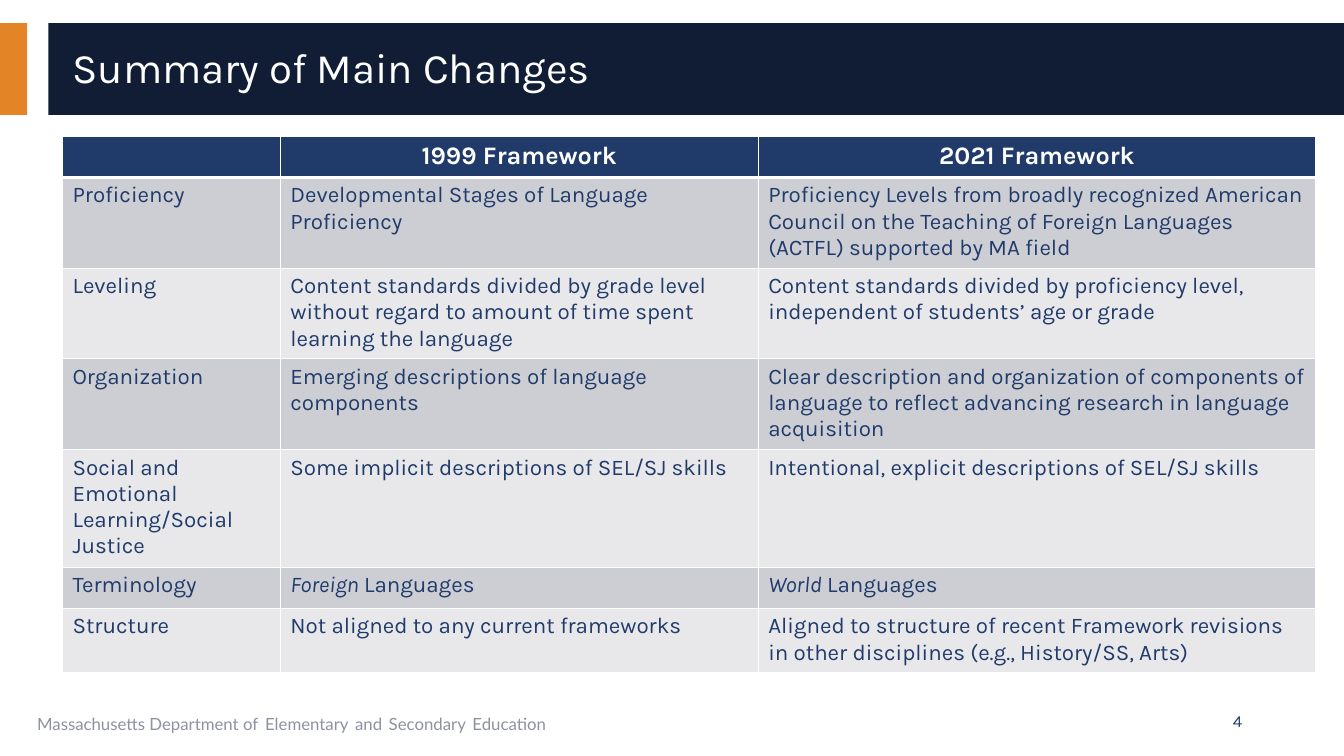
import pptx
import pptx.util
import pptx.dml.color
import pptx.enum.shapes
import pptx.enum.text
import pptx.oxml
import pptx.oxml.ns

Inches = pptx.util.Inches
ALIGN = pptx.enum.text.PP_ALIGN
ANCHOR = pptx.enum.text.MSO_ANCHOR
NAVY, WHITE, GREY = "203B6A", "FFFFFF", "8D92A1"


def color(value):
    return pptx.dml.color.RGBColor.from_string(value)


def add_run(paragraph, text, size, hue, **format_values):
    run = paragraph.add_run()
    run.text = text
    run.font.size = pptx.util.Pt(size)
    run.font.color.rgb = color(hue)
    for name, value in ({"name": "Karla"} | format_values).items():
        setattr(run.font, name, value)


deck = pptx.Presentation()
deck.slide_width = Inches(13.33)
deck.slide_height = Inches(7.5)
slide = deck.slides.add_slide(deck.slide_layouts[6])

for left, width, hue in [(0, 0.27, "E38526"), (0.48, 12.85, "101D35")]:
    band = slide.shapes.add_shape(
        pptx.enum.shapes.MSO_SHAPE.RECTANGLE,
        Inches(left), Inches(0.23), Inches(width), Inches(0.91))
    band.shadow.inherit = False
    band.fill.solid()
    band.fill.fore_color.rgb = color(hue)
    band.line.fill.background()

footer_words = ["Massachusetts Department of", "Elementary", "and", "Secondary", "Education"]
footer_runs = [(footer_words[0], 12, GREY, "Lato")]
for word in footer_words[1:]:
    footer_runs += [(" ", 18, NAVY, "Lato"), (word, 12, GREY, "Lato")]

texts = [
    ((0.27, 6.95, 8.44, 0.4), footer_runs, ANCHOR.TOP, {}),
    ((0.62, 0.32, 12.44, 0.74), [("Summary of Main Changes", 30, WHITE, "Karla")],
     ANCHOR.MIDDLE, {"line_spacing": 0.9}),
    ((9.42, 6.95, 3, 0.4), [("4", 12, NAVY, "Karla")],
     ANCHOR.MIDDLE, {"alignment": ALIGN.RIGHT}),
]
for place, runs, anchor, format_values in texts:
    frame = slide.shapes.add_textbox(*map(Inches, place)).text_frame
    frame.word_wrap = True
    frame.vertical_anchor = anchor
    paragraph = frame.paragraphs[0]
    for name, value in format_values.items():
        setattr(paragraph, name, value)
    for text, size, hue, font_name in runs:
        add_run(paragraph, text, size, hue, name=font_name)

changes = [
    ("", "1999 Framework", "2021 Framework"),
    ("Proficiency", "Developmental Stages of Language Proficiency",
     "Proficiency Levels from broadly recognized American Council on the Teaching of "
     "Foreign Languages (ACTFL) supported by MA field"),
    ("Leveling",
     "Content standards divided by grade level without regard to amount of time spent "
     "learning the language",
     "Content standards divided by proficiency level, independent of students’ age or grade"),
    ("Organization", "Emerging descriptions of language components",
     "Clear description and organization of components of language to reflect advancing "
     "research in language acquisition"),
    ("Social and Emotional Learning/Social Justice",
     "Some implicit descriptions of SEL/SJ skills",
     "Intentional, explicit descriptions of SEL/SJ skills"),
    ("Terminology", "Foreign Languages", "World Languages"),
    ("Structure", "Not aligned to any current frameworks",
     "Aligned to structure of recent Framework revisions in other disciplines "
     "(e.g., History/SS, Arts)"),
]
italic_words = ("Foreign", "World")
column_widths = [2.16, 4.74, 5.53]
row_heights = [0.41, 0.88, 0.88, 0.88, 1.14, 0.41, 0.61]
comparison = slide.shapes.add_table(
    len(changes), len(column_widths), Inches(0.62), Inches(1.35),
    Inches(sum(column_widths)), Inches(sum(row_heights))).table
for column, width in zip(comparison.columns, column_widths):
    column.width = Inches(width)
for row, height in zip(comparison.rows, row_heights):
    row.height = Inches(height)

for row_index, entries in enumerate(changes):
    is_header = row_index == 0
    row_fill = NAVY if is_header else ("E8E8EB", "CDCED4")[row_index % 2]
    border_widths = {"L": 1, "R": 1, "T": 3 if row_index == 1 else 1, "B": 3 if is_header else 1}
    for column_index, entry in enumerate(entries):
        cell = comparison.cell(row_index, column_index)
        cell_properties = cell._tc.get_or_add_tcPr()
        for side, points in border_widths.items():
            cell_properties.append(pptx.oxml.parse_xml(
                f'<a:ln{side} {pptx.oxml.ns.nsdecls("a")} w="{pptx.util.Pt(points)}">'
                f'<a:solidFill><a:srgbClr val="{WHITE}"/></a:solidFill></a:ln{side}>'))
        cell.fill.solid()
        cell.fill.fore_color.rgb = color(row_fill)
        paragraph = cell.text_frame.paragraphs[0]
        if is_header:
            paragraph.alignment = ALIGN.CENTER
            if entry:
                add_run(paragraph, entry, 18, WHITE, bold=True)
            continue
        first_word, space, rest = entry.partition(" ")
        if first_word in italic_words:
            add_run(paragraph, first_word, 16, NAVY, bold=False, italic=True)
            entry = space + rest
        add_run(paragraph, entry, 16, NAVY, bold=False)

deck.save("out.pptx")
